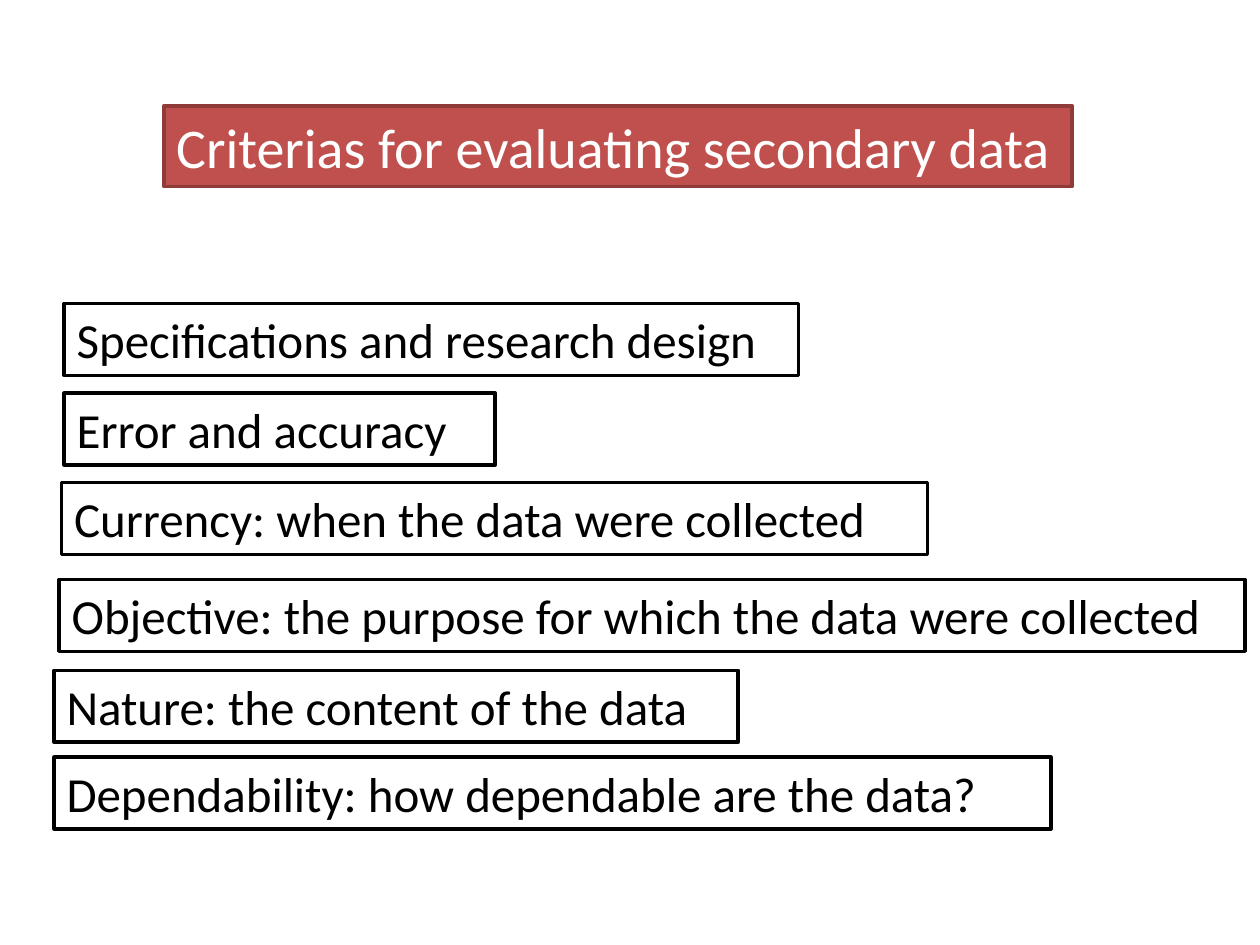
from dataclasses import dataclass

from pptx import Presentation
from pptx import util as u
from pptx.dml.color import RGBColor
from pptx.enum import shapes, text


@dataclass(frozen=True)
class Style:
    fill: str
    line: str
    ink: str
    size: int
    height: float
    wrap: bool


@dataclass(frozen=True)
class Theme:
    font: str = "Calibri"
    line_width: float = 2
    title: Style = Style("C0504D", "8E3B39", "FFFFFF", 32, 0.64, False)
    criterion: Style = Style("FFFFFF", "000000", "000000", 28, 0.57, True)


THEME = Theme()

CRITERIA = [
    ("Specifications and research design", 0.51, 2.41, 5.83),
    ("Error and accuracy", 0.51, 3.12, 3.42),
    ("Currency: when the data were collected", 0.49, 3.83, 6.87),
    ("Objective: the purpose for which the data were collected", 0.47, 4.6, 9.41),
    ("Nature: the content of the data", 0.43, 5.32, 5.43),
    ("Dependability: how dependable are the data?", 0.43, 6.01, 7.91),
]


def add_label(slide, wording, left, top, width, style):
    label = slide.shapes.add_shape(
        shapes.MSO_SHAPE.RECTANGLE,
        u.Inches(left), u.Inches(top), u.Inches(width), u.Inches(style.height),
    )
    label.shadow.inherit = False
    label.fill.solid()
    label.fill.fore_color.rgb = RGBColor.from_string(style.fill)
    label.line.color.rgb = RGBColor.from_string(style.line)
    label.line.width = u.Pt(THEME.line_width)

    frame = label.text_frame
    frame.text = wording
    frame.word_wrap = style.wrap
    frame.auto_size = text.MSO_AUTO_SIZE.SHAPE_TO_FIT_TEXT
    frame.vertical_anchor = text.MSO_ANCHOR.TOP
    paragraph = frame.paragraphs[0]
    paragraph.alignment = text.PP_ALIGN.LEFT
    font = paragraph.runs[0].font
    font.name = THEME.font
    font.size = u.Pt(style.size)
    font.color.rgb = RGBColor.from_string(style.ink)


def main():
    deck = Presentation()
    deck.slide_width = u.Inches(10)
    deck.slide_height = u.Inches(7.5)
    slide = deck.slides.add_slide(deck.slide_layouts[6])

    add_label(slide, "Criterias for evaluating secondary data", 1.3, 0.84, 7.21, THEME.title)
    for wording, left, top, width in CRITERIA:
        add_label(slide, wording, left, top, width, THEME.criterion)

    deck.save("out.pptx")


if __name__ == "__main__":
    main()
